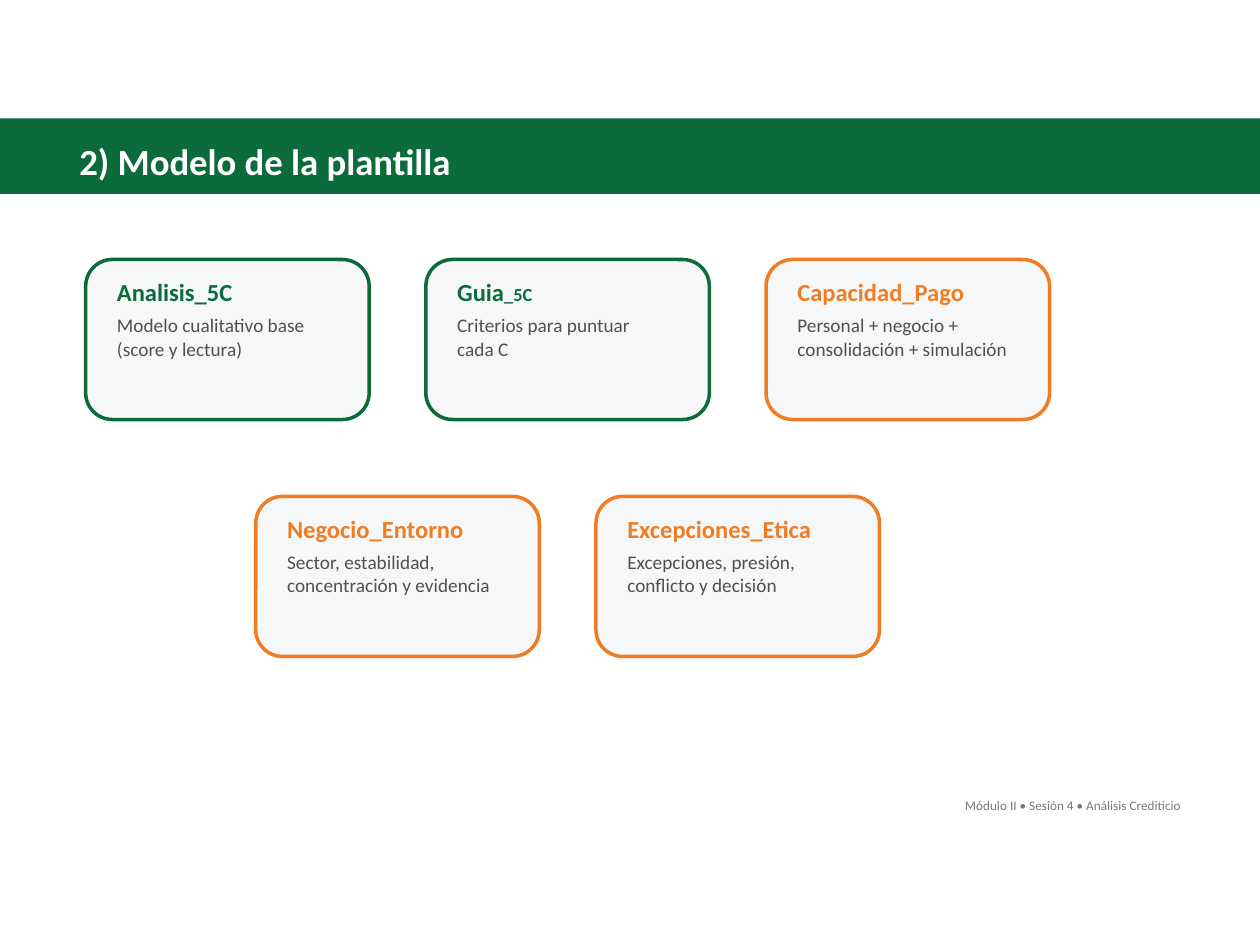
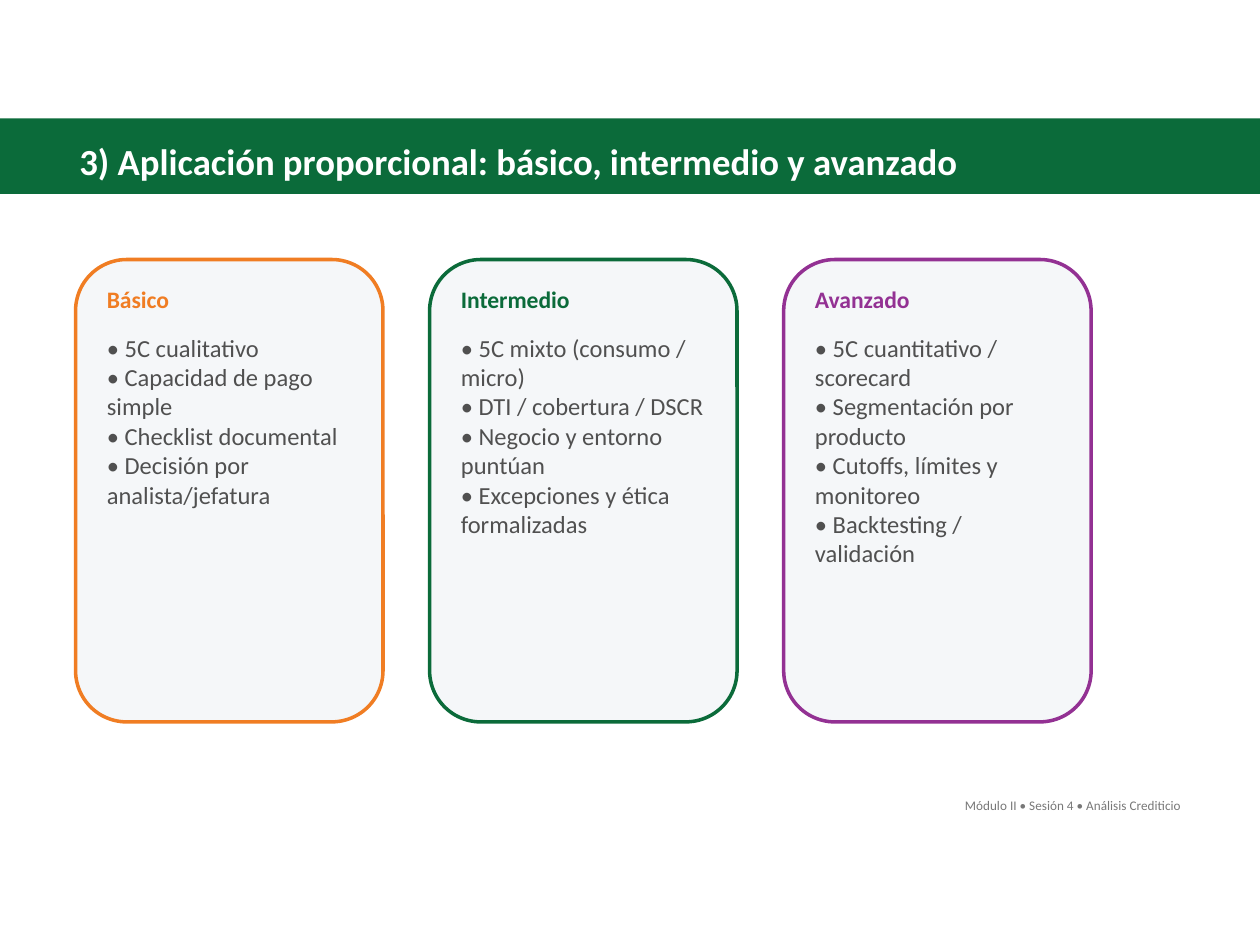
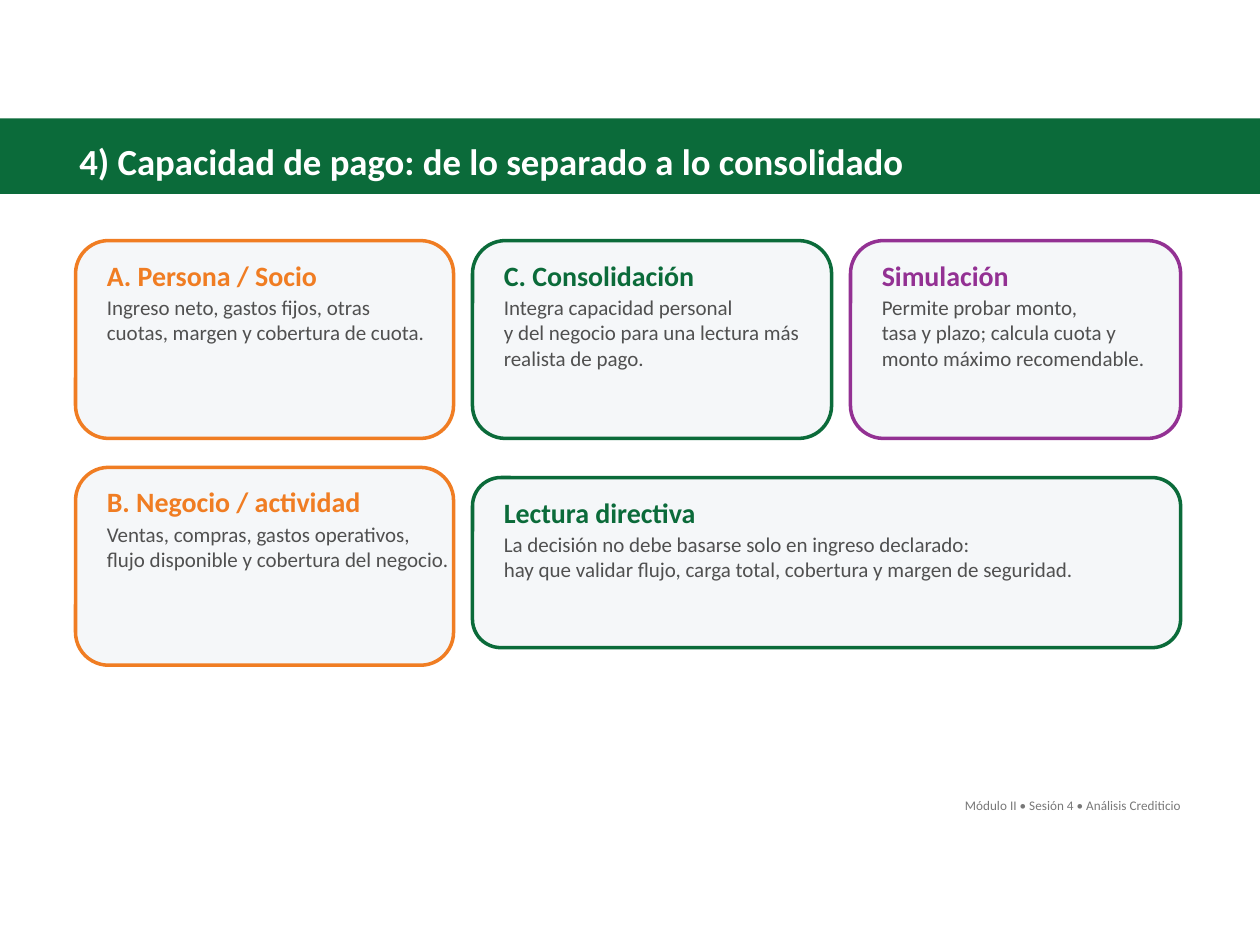
from pptx import Presentation
from pptx.dml.color import RGBColor
from pptx.enum.shapes import MSO_SHAPE
from pptx.enum.text import MSO_ANCHOR, MSO_AUTO_SIZE, PP_ALIGN
from pptx.util import Inches, Pt

RECTANGLE = MSO_SHAPE.RECTANGLE
ROUNDED = MSO_SHAPE.ROUNDED_RECTANGLE
LEFT, RIGHT = PP_ALIGN.LEFT, PP_ALIGN.RIGHT
TOP = MSO_ANCHOR.TOP
NO_FIT = MSO_AUTO_SIZE.NONE

FONT = "Calibri"
COLORS = {
    "green": "0B6B3A",
    "orange": "F07D23",
    "purple": "933193",
    "panel": "F5F7F9",
    "body": "505050",
    "footer": "787878",
    "white": "FFFFFF",
}
FOOTER = "Módulo II • Sesión 4 • Análisis Crediticio"
TITLE_ONLY = 5
TEXT_INSET = 0.15

TEMPLATE_TITLE = "2) Modelo de la plantilla"
TEMPLATE_SHEETS = [
    [
        ("green", "Analisis_5C", ["Modelo cualitativo base", "(score y lectura)"]),
        ("green", [("Guia", 14), ("_5C", 10.5)], ["Criterios para puntuar", "cada C"]),
        ("orange", "Capacidad_Pago", ["Personal + negocio +", "consolidación + simulación"]),
    ],
    [
        ("orange", "Negocio_Entorno", ["Sector, estabilidad,", "concentración y evidencia"]),
        ("orange", "Excepciones_Etica", ["Excepciones, presión,", "conflicto y decisión"]),
    ],
]

LEVELS_TITLE = "3) Aplicación proporcional: básico, intermedio y avanzado"
LEVELS = [
    ("orange", "Básico", [
        "5C cualitativo",
        "Capacidad de pago simple",
        "Checklist documental",
        "Decisión por analista/jefatura",
    ]),
    ("green", "Intermedio", [
        "5C mixto (consumo / micro)",
        "DTI / cobertura / DSCR",
        "Negocio y entorno puntúan",
        "Excepciones y ética formalizadas",
    ]),
    ("purple", "Avanzado", [
        "5C cuantitativo / scorecard",
        "Segmentación por producto",
        "Cutoffs, límites y monitoreo",
        "Backtesting / validación",
    ]),
]

PAYMENT_TITLE = "4) Capacidad de pago: de lo separado a lo consolidado"
PAYMENT_CARDS = [
    ((0.6, 1.91, 3, 1.57), "orange", "A. Persona / Socio", [
        "Ingreso neto, gastos fijos, otras",
        "cuotas, margen y cobertura de cuota.",
    ]),
    ((0.6, 3.71, 3, 1.57), "orange", "B. Negocio / actividad", [
        "Ventas, compras, gastos operativos,",
        "flujo disponible y cobertura del negocio.",
    ]),
    ((3.75, 1.91, 2.85, 1.57), "green", "C. Consolidación", [
        "Integra capacidad personal",
        "y del negocio para una lectura más",
        "realista de pago.",
    ]),
    ((6.75, 1.91, 2.62, 1.57), "purple", "Simulación", [
        "Permite probar monto,",
        "tasa y plazo; calcula cuota y",
        "monto máximo recomendable.",
    ]),
    ((3.75, 3.79, 5.62, 1.35), "green", "Lectura directiva", [
        "La decisión no debe basarse solo en ingreso declarado:",
        "hay que validar flujo, carga total, cobertura y margen de seguridad.",
    ]),
]


def rgb(name):
    return RGBColor.from_string(COLORS[name])


def write(frame, paragraphs, size, color, bold=False, align=LEFT):
    frame.word_wrap = True
    frame.auto_size = NO_FIT
    frame.vertical_anchor = TOP
    for index, content in enumerate(paragraphs):
        para = frame.add_paragraph() if index else frame.paragraphs[0]
        para.alignment = align
        spans = [(content, size)] if isinstance(content, str) else content
        for text, span_size in spans:
            span = para.add_run()
            span.text = text
            span.font.name = FONT
            span.font.size = Pt(span_size)
            span.font.bold = bold
            span.font.color.rgb = rgb(color)


def add_text(page, area, paragraphs, **style):
    box = page.shapes.add_textbox(*map(Inches, area))
    write(box.text_frame, paragraphs, **style)


def add_panel(page, kind, area, fill, line=None):
    panel = page.shapes.add_shape(kind, *map(Inches, area))
    panel.shadow.inherit = False
    panel.fill.solid()
    panel.fill.fore_color.rgb = rgb(fill)
    if line:
        panel.line.color.rgb = rgb(line)
        panel.line.width = Pt(2)
    else:
        panel.line.fill.background()
    return panel


def add_page(deck, title):
    page = deck.slides.add_slide(deck.slide_layouts[TITLE_ONLY])
    band = add_panel(page, RECTANGLE, (0, 0.94, 10, 0.6), "green")
    page.shapes._spTree.insert(2, band._element)
    heading = page.shapes.title
    heading.left, heading.top = Inches(0.53), Inches(1.05)
    heading.width, heading.height = Inches(8.94), Inches(0.45)
    write(heading.text_frame, [title], size=21, color="white", bold=True)
    add_text(page, (6.47, 6.28, 3, 0.23), [FOOTER], size=7.5, color="footer", align=RIGHT)
    return page


def add_card(page, area, color, heading, lines, sizes, offsets=(0.09, 0.38), trim=0):
    left, top, width, height = area
    text_left = left + TEXT_INSET
    heading_top, body_top = offsets
    add_panel(page, ROUNDED, area, "panel", color)
    add_text(page, (text_left, top + heading_top, width - 2 * TEXT_INSET, 0.35),
             [heading], size=sizes[0], color=color, bold=True)
    add_text(page, (text_left, top + body_top, width - trim, height - body_top),
             lines, size=sizes[1], color="body")


def build_template_page(deck):
    page = add_page(deck, TEMPLATE_TITLE)
    step = 2.7
    for row, sheets in enumerate(TEMPLATE_SHEETS):
        row_left = 0.68 + (len(TEMPLATE_SHEETS[0]) - len(sheets)) * step / 2
        for column, sheet in enumerate(sheets):
            area = (row_left + column * step, 2.06 + row * 1.88, 2.25, 1.27)
            add_card(page, area, *sheet, sizes=(14, 11))


def build_levels_page(deck):
    page = add_page(deck, LEVELS_TITLE)
    for column, (color, heading, items) in enumerate(LEVELS):
        area = (0.6 + column * 2.81, 2.06, 2.44, 3.67)
        bullets = [f"• {item}" for item in items]
        add_card(page, area, color, heading, bullets, sizes=(13.5, 14),
                 offsets=(0.15, 0.53), trim=2 * TEXT_INSET)


def build_payment_page(deck):
    page = add_page(deck, PAYMENT_TITLE)
    for card in PAYMENT_CARDS:
        add_card(page, *card, sizes=(16, 12))


def main():
    deck = Presentation()
    deck.slide_width, deck.slide_height = Inches(10), Inches(7.5)
    build_template_page(deck)
    build_levels_page(deck)
    build_payment_page(deck)
    deck.save("out.pptx")


if __name__ == "__main__":
    main()
